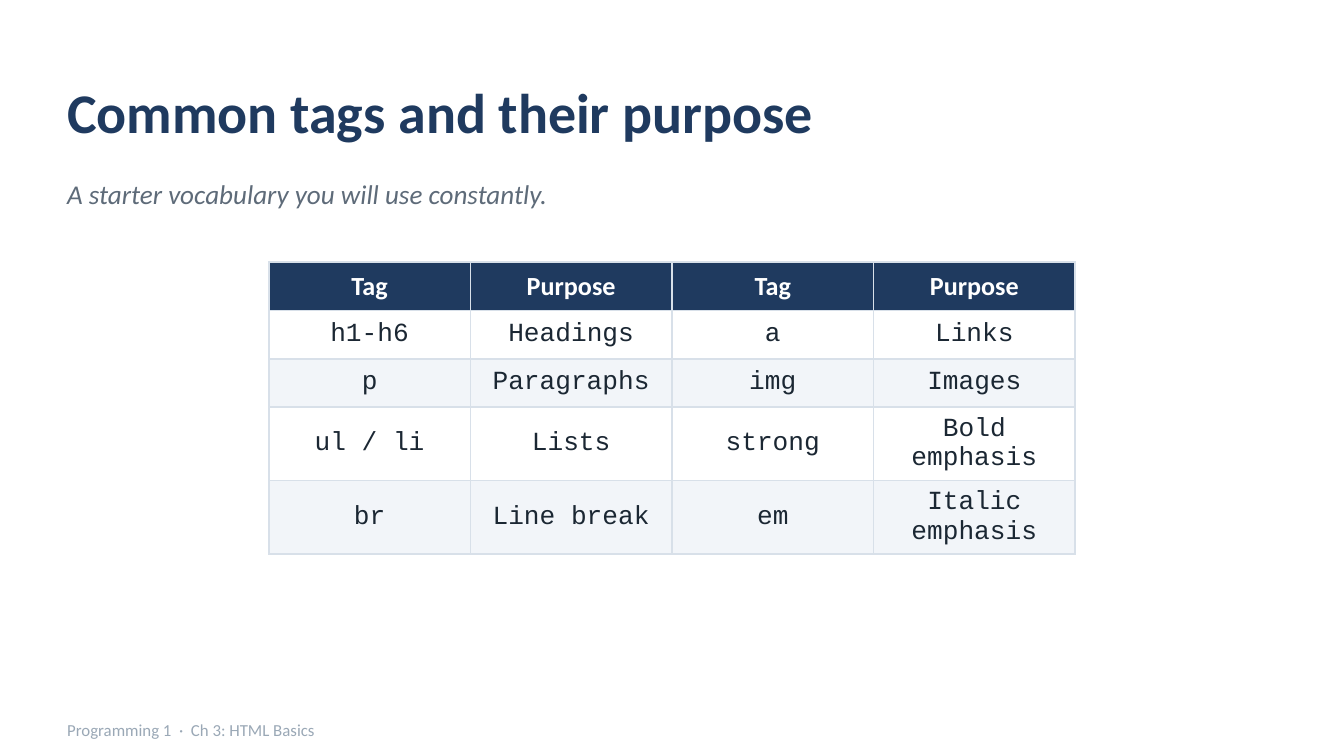
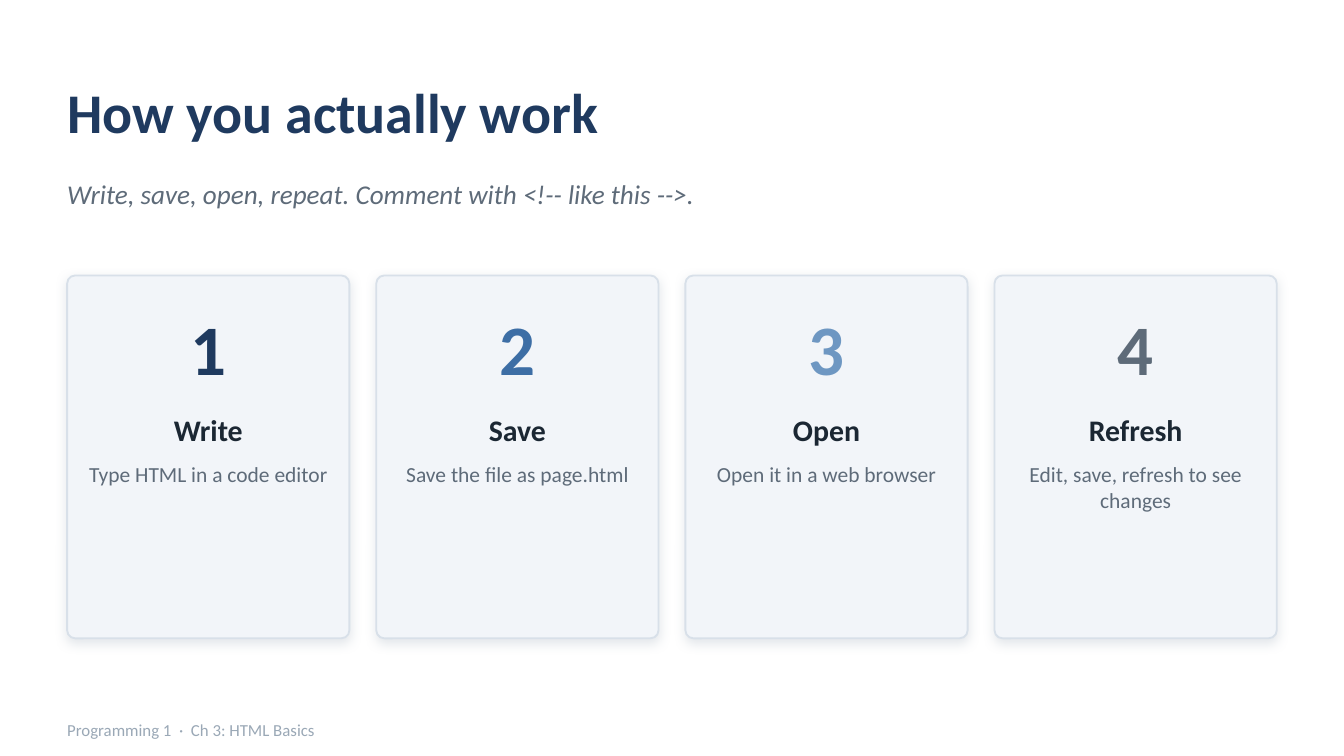
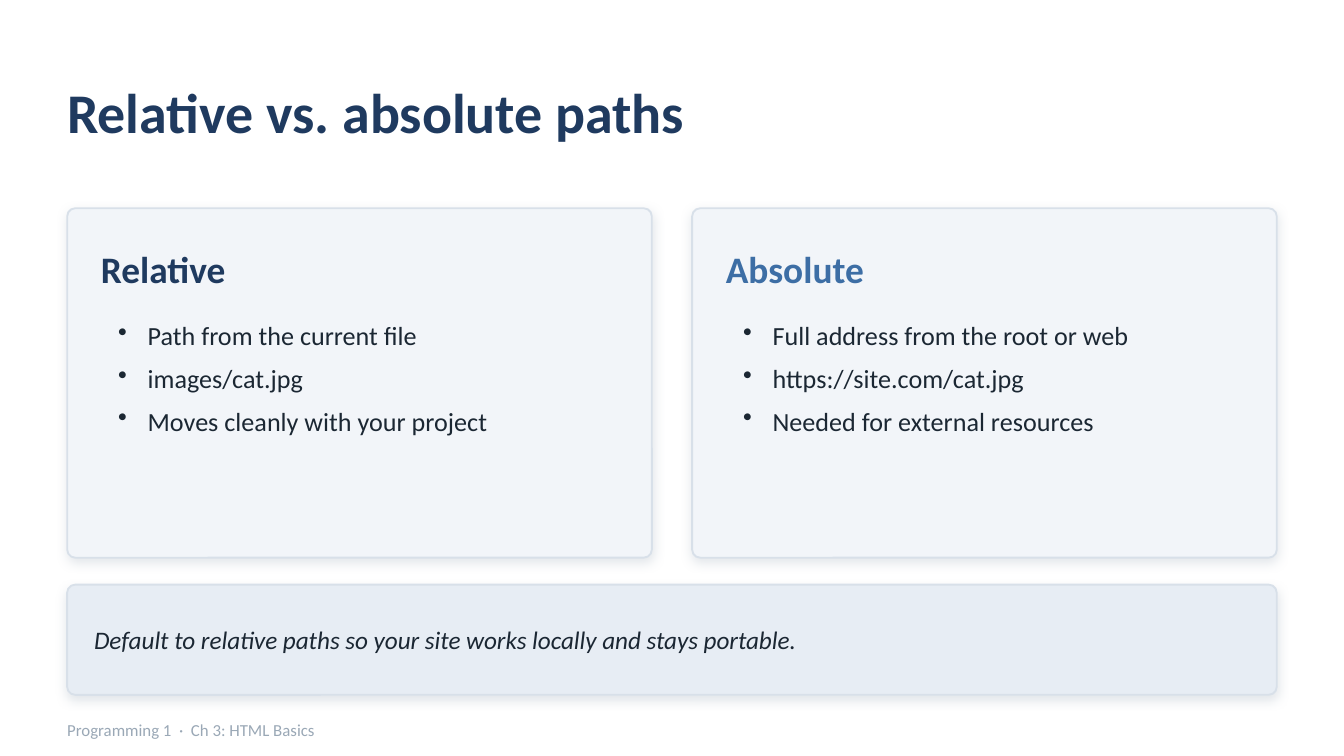
"""Build three HTML basics slides: a tag table, a work cycle and a path comparison."""
from lxml import etree
from pptx import Presentation
from pptx.dml.color import RGBColor
from pptx.enum.shapes import MSO_SHAPE
from pptx.enum.text import MSO_ANCHOR, PP_ALIGN
from pptx.oxml.ns import qn
from pptx.util import Inches, Pt

ROUNDED = MSO_SHAPE.ROUNDED_RECTANGLE
TOP, MIDDLE = MSO_ANCHOR.TOP, MSO_ANCHOR.MIDDLE
LEFT, CENTER = PP_ALIGN.LEFT, PP_ALIGN.CENTER

BODY_FONT, CODE_FONT = "Calibri", "Courier New"
NAVY, BLUE, SKY, SLATE = "1F3A5F", "3D6EA5", "6E97C2", "5E6B79"
INK, MUTED, BORDER = "1B2733", "9AA8B6", "D8E0E9"
WHITE, PANEL, CALLOUT = "FFFFFF", "F2F5F9", "E7EDF4"

PAGE_WIDTH = 10
PAGE_HEIGHT = PAGE_WIDTH * 9 / 16
MARGIN = 0.5
CONTENT_WIDTH = PAGE_WIDTH - 2 * MARGIN
CORNER_RADIUS = 0.06
FOOTER = "Programming 1  ·  Ch 3: HTML Basics"

TAG_ROWS = [
    ("Tag", "Purpose", "Tag", "Purpose"),
    ("h1-h6", "Headings", "a", "Links"),
    ("p", "Paragraphs", "img", "Images"),
    ("ul / li", "Lists", "strong", "Bold emphasis"),
    ("br", "Line break", "em", "Italic emphasis"),
]
STEPS = [
    ("Write", "Type HTML in a code editor", NAVY),
    ("Save", "Save the file as page.html", BLUE),
    ("Open", "Open it in a web browser", SKY),
    ("Refresh", "Edit, save, refresh to see changes", SLATE),
]
PATH_KINDS = [
    ("Relative", NAVY, [
        "Path from the current file",
        "images/cat.jpg",
        "Moves cleanly with your project",
    ]),
    ("Absolute", BLUE, [
        "Full address from the root or web",
        "https://site.com/cat.jpg",
        "Needed for external resources",
    ]),
]
ADVICE = "Default to relative paths so your site works locally and stays portable."


def rgb(value):
    return RGBColor.from_string(value)


def add_xml(parent, tag, **attributes):
    return etree.SubElement(parent, qn(tag), attributes)


def style(para, size, color, bold=False, italic=False, font=BODY_FONT, align=LEFT):
    para.alignment = align
    para.font.name = font
    para.font.size = Pt(size)
    para.font.bold = bold
    para.font.italic = italic
    para.font.color.rgb = rgb(color)


def add_box(page, left, top, width, height, anchor=MIDDLE):
    box = page.shapes.add_textbox(*map(Inches, (left, top, width, height)))
    frame = box.text_frame
    frame.word_wrap = True
    frame.vertical_anchor = anchor
    return frame


def add_text(page, area, text, size, color, anchor=MIDDLE, **looks):
    frame = add_box(page, *area, anchor)
    frame.margin_left = frame.margin_right = frame.margin_top = frame.margin_bottom = 0
    frame.text = text
    style(frame.paragraphs[0], size, color, **looks)


def add_bullets(page, area, items):
    frame = add_box(page, *area, TOP)
    for index, item in enumerate(items):
        para = frame.add_paragraph() if index else frame.paragraphs[0]
        para.text = item
        para.space_after = Pt(6)
        properties = para._p.get_or_add_pPr()
        properties.set("marL", str(Inches(0.22)))
        properties.set("indent", str(-Inches(0.22)))
        add_xml(properties, "a:buSzPct", val="100000")
        add_xml(properties, "a:buChar", char="•")
        style(para, 14, INK)


def add_card(page, left, top, width, height, fill=PANEL):
    card = page.shapes.add_shape(ROUNDED, *map(Inches, (left, top, width, height)))
    card.adjustments[0] = CORNER_RADIUS / min(width, height)
    card.fill.solid()
    card.fill.fore_color.rgb = rgb(fill)
    card.line.color.rgb = rgb(BORDER)
    card.line.width = Pt(1)
    card.shadow.inherit = False
    effects = card._element.spPr.find(qn("a:effectLst"))
    shadow = add_xml(effects, "a:outerShdw", blurRad=str(Pt(6)), dist=str(Pt(2)),
                     dir="5400000", algn="bl", rotWithShape="0")
    add_xml(add_xml(shadow, "a:srgbClr", val=MUTED), "a:alpha", val="28000")


def add_page(deck, title, subtitle=None):
    page = deck.slides.add_slide(deck.slide_layouts[6])
    page.background.fill.solid()
    page.background.fill.fore_color.rgb = rgb(WHITE)
    add_text(page, (MARGIN, 0.4, CONTENT_WIDTH, 0.85), title, 30, NAVY, bold=True)
    if subtitle:
        add_text(page, (MARGIN, 1.24, CONTENT_WIDTH, 0.4), subtitle, 14.5, SLATE, italic=True)
    add_text(page, (MARGIN, 5.3, 8, 0.26), FOOTER, 9, MUTED)
    return page


def fill_cell(cell, text, row_index):
    properties = cell._tc.get_or_add_tcPr()
    for side in ("a:lnL", "a:lnR", "a:lnT", "a:lnB"):
        line = add_xml(properties, side, w=str(Pt(1)))
        add_xml(add_xml(line, "a:solidFill"), "a:srgbClr", val=BORDER)
    cell.fill.solid()
    cell.vertical_anchor = MIDDLE
    cell.margin_top = cell.margin_bottom = Inches(0.04)
    cell.text = text
    para = cell.text_frame.paragraphs[0]
    if row_index == 0:
        cell.fill.fore_color.rgb = rgb(NAVY)
        style(para, 14, WHITE, bold=True, align=CENTER)
    else:
        cell.fill.fore_color.rgb = rgb(WHITE if row_index % 2 else PANEL)
        style(para, 14, INK, font=CODE_FONT, align=CENTER)


def build_tags(deck):
    page = add_page(deck, "Common tags and their purpose",
                    "A starter vocabulary you will use constantly.")
    row_height, column_width = 0.36, 1.5
    row_count, column_count = len(TAG_ROWS), len(TAG_ROWS[0])
    table = page.shapes.add_table(
        row_count, column_count, Inches(2), Inches(1.95),
        Inches(column_width * column_count), Inches(row_height * row_count)).table
    for row_index, values in enumerate(TAG_ROWS):
        table.rows[row_index].height = Inches(row_height)
        for column_index, value in enumerate(values):
            fill_cell(table.cell(row_index, column_index), value, row_index)


def build_steps(deck):
    page = add_page(deck, "How you actually work",
                    "Write, save, open, repeat. Comment with <!-- like this -->.")
    gap = 0.2
    width = (CONTENT_WIDTH - gap * (len(STEPS) - 1)) / len(STEPS)
    for index, (name, detail, color) in enumerate(STEPS):
        left = MARGIN + index * (width + gap)
        add_card(page, left, 2.05, width, 2.7)
        add_text(page, (left, 2.23, width, 0.7), str(index + 1), 38, color,
                 bold=True, align=CENTER)
        add_text(page, (left + 0.1, 3, width - 0.2, 0.4), name, 16, INK,
                 bold=True, align=CENTER)
        add_text(page, (left + 0.15, 3.43, width - 0.3, 1.1), detail, 11.5, SLATE,
                 anchor=TOP, align=CENTER)


def build_paths(deck):
    page = add_page(deck, "Relative vs. absolute paths")
    gap = 0.3
    width = (CONTENT_WIDTH - gap) / 2
    for index, (name, color, points) in enumerate(PATH_KINDS):
        left = MARGIN + index * (width + gap)
        add_card(page, left, 1.55, width, 2.6)
        add_text(page, (left + 0.25, 1.75, width - 0.5, 0.5), name, 20, color, bold=True)
        add_bullets(page, (left + 0.28, 2.33, width - 0.5, 1.6), points)
    add_card(page, MARGIN, 4.35, CONTENT_WIDTH, 0.82, CALLOUT)
    add_text(page, (MARGIN + 0.2, 4.4, CONTENT_WIDTH - 0.4, 0.72), ADVICE, 13.5, INK, italic=True)


def main():
    deck = Presentation()
    deck.slide_width, deck.slide_height = Inches(PAGE_WIDTH), Inches(PAGE_HEIGHT)
    build_tags(deck)
    build_steps(deck)
    build_paths(deck)
    deck.save("out.pptx")


if __name__ == "__main__":
    main()
